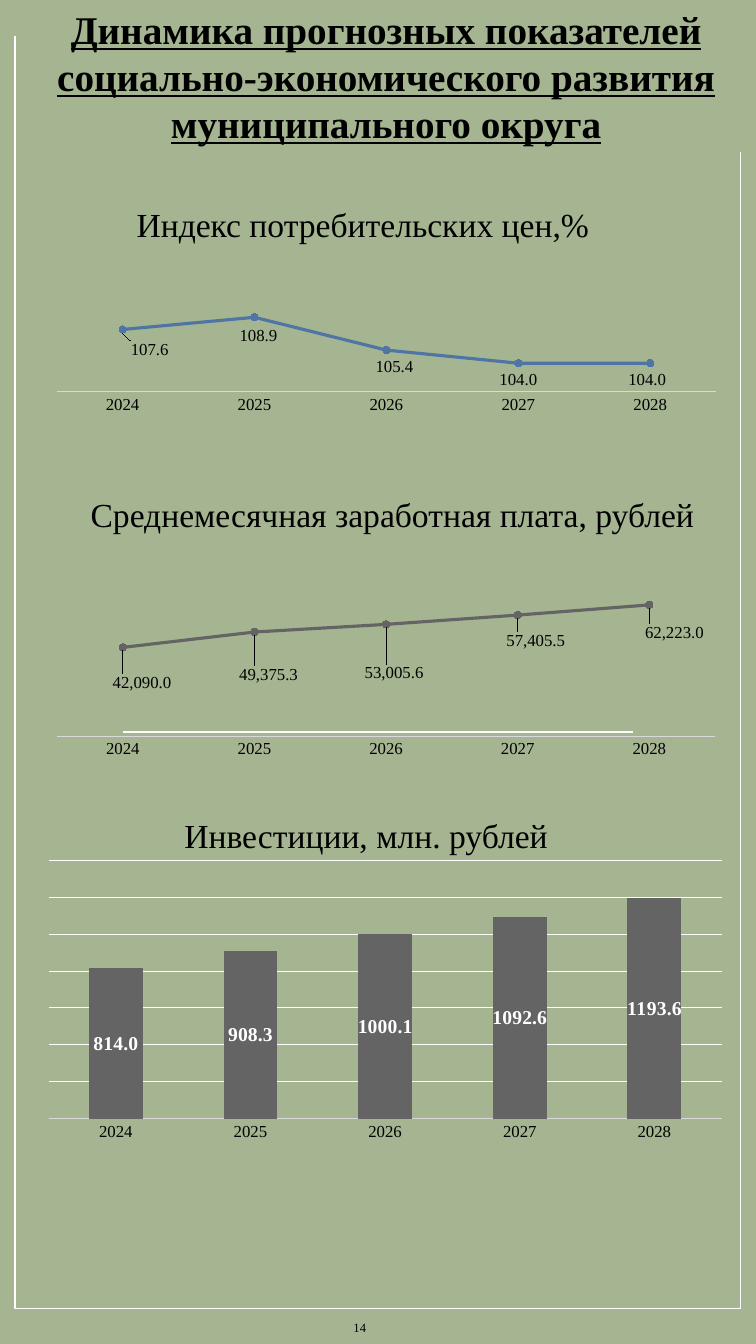
from lxml.etree import SubElement
from pptx import Presentation
from pptx.chart.data import CategoryChartData
from pptx.dml.color import RGBColor
from pptx.enum.chart import XL_CHART_TYPE, XL_LABEL_POSITION, XL_MARKER_STYLE, XL_TICK_MARK
from pptx.enum.shapes import MSO_CONNECTOR, MSO_SHAPE
from pptx.enum.text import MSO_ANCHOR, PP_ALIGN
from pptx.oxml import parse_xml
from pptx.oxml.ns import nsdecls, qn
from pptx.util import Inches, Pt

COLORS = {"bg": "A5B592", "white": "FFFFFF", "text": "000000",
          "axis": "D9D9D9", "blue": "4E75A3", "gray": "646464"}
YEARS = ["2024", "2025", "2026", "2027", "2028"]
FONT = "Times New Roman"


def rgb(name):
    """Return the palette colour called name."""
    return RGBColor.from_string(COLORS[name])


def layout_xml(**values):
    """Return a manual chart layout holding the given values."""
    tags = "".join(f'<c:{k} val="{v}"/>' for k, v in values.items())
    return parse_xml(f'<c:layout {nsdecls("c")}><c:manualLayout>{tags}</c:manualLayout></c:layout>')


class Deck:
    """Holds the style and the current slide."""

    def __init__(self, width, height):
        """Open a presentation with one title-only slide."""
        self.prs = Presentation()
        self.prs.slide_width, self.prs.slide_height = Inches(width), Inches(height)
        self.s = self.prs.slides.add_slide(self.prs.slide_layouts[5])
        self.fill(self.s.background, "bg")

    def fill(self, target, color):
        """Give target a solid fill."""
        target.fill.solid()
        target.fill.fore_color.rgb = rgb(color)

    def stroke(self, line, color, width):
        """Give a line its colour and width."""
        line.color.rgb = rgb(color)
        line.width = Pt(width)

    def style(self, font, size, color="text", **extra):
        """Set font attributes."""
        for name, value in {"name": FONT, "size": Pt(size), **extra}.items():
            setattr(font, name, value)
        font.color.rgb = rgb(color)

    def set_text(self, sp, text, size, align, anchor=MSO_ANCHOR.TOP, **extra):
        """Put one paragraph into a shape."""
        tf = sp.text_frame
        tf.word_wrap, tf.vertical_anchor = True, anchor
        p = tf.paragraphs[0]
        p.alignment = align
        r = p.add_run()
        r.text = text
        self.style(r.font, size, **extra)

    def frame(self, *box):
        """Draw the page frame."""
        sp = self.s.shapes.add_shape(MSO_SHAPE.RECTANGLE, *map(Inches, box))
        sp.shadow.inherit = False
        self.fill(sp, "bg")
        self.stroke(sp.line, "white", 1)

    def rule(self, x1, x2, y):
        """Draw a horizontal line."""
        line = self.s.shapes.add_connector(MSO_CONNECTOR.STRAIGHT, *map(Inches, (x1, y, x2, y)))
        self.stroke(line.line, "white", 0.79)
        SubElement(line._element.spPr, qn("a:effectLst"))

    def title(self, text, *box):
        """Place the slide title in front of the frame."""
        sp = self.s.shapes.title
        sp.left, sp.top, sp.width, sp.height = map(Inches, box)
        self.fill(sp, "bg")
        self.set_text(sp, text, 28, PP_ALIGN.CENTER, bold=True, underline=True)
        self.s.shapes._spTree.append(sp._element)

    def text(self, text, box, size=24, align=PP_ALIGN.LEFT, anchor=MSO_ANCHOR.TOP):
        """Add a text box."""
        self.set_text(self.s.shapes.add_textbox(*map(Inches, box)), text, size, align, anchor)

    def chart(self, kind, box, plot, values, scale, fmt="0.0"):
        """Add a chart with one series by year."""
        data = CategoryChartData(number_format=fmt)
        data.categories = YEARS
        data.add_series("Series 1", values)
        chart = self.s.shapes.add_chart(kind, *map(Inches, box), data).chart
        chart.has_title = chart.has_legend = False
        self.style(chart.font, 10)
        area = chart._chartSpace.chart.plotArea
        for old in area.findall(qn("c:layout")):
            area.remove(old)
        x, y, w, h = plot
        area.insert(0, layout_xml(layoutTarget="inner", xMode="edge", yMode="edge",
                                  x=x, y=y, w=w, h=h))
        cat, val = chart.category_axis, chart.value_axis
        cat.major_tick_mark = XL_TICK_MARK.NONE
        self.style(cat.tick_labels.font, 12)
        self.stroke(cat.format.line, "axis", 0.75)
        val.minimum_scale, val.maximum_scale, val.major_unit = scale
        val.has_major_gridlines = val.visible = False
        val.tick_labels.number_format = fmt
        val.tick_labels.number_format_is_linked = False
        chart.plots[0].vary_by_categories = False
        return chart

    def labels(self, owner, fmt, size, color="text", **extra):
        """Show the values of a series."""
        labels = owner.data_labels
        labels.show_value = True
        labels.number_format, labels.number_format_is_linked = fmt, False
        self.style(labels.font, size, color, **extra)

    def line_chart(self, box, plot, values, scale, color, offsets, fmt="0.0"):
        """Add a line chart whose labels are shifted by offsets in inches."""
        chart = self.chart(XL_CHART_TYPE.LINE_MARKERS, box, plot, values, scale, fmt)
        series = chart.plots[0].series[0]
        series.smooth = False
        self.stroke(series.format.line, color, 2.25)
        series.marker.style, series.marker.size = XL_MARKER_STYLE.CIRCLE, 5
        self.fill(series.marker.format, color)
        self.stroke(series.marker.format.line, color, 0.75)
        self.labels(series, fmt, 12)
        for i in range(len(offsets)):
            label = series.points[i].data_label
            self.style(label.font, 12)
            label.position = XL_LABEL_POSITION.BELOW
        for mark, (dx, dy) in zip(series._element.iter(qn("c:dLbl")), offsets):
            mark.insert(1, layout_xml(x=round(dx / box[2], 4), y=round(dy / box[3], 4)))

    def column_chart(self, box, plot, values, scale, color):
        """Add a column chart with gridlines."""
        chart = self.chart(XL_CHART_TYPE.COLUMN_STACKED, box, plot, values, scale)
        bars = chart.plots[0]
        bars.gap_width, bars.overlap = 150, 100
        self.fill(bars.series[0].format, color)
        self.labels(bars.series[0], "0.0", 14, "white", bold=True)
        chart.value_axis.has_major_gridlines = True
        self.stroke(chart.value_axis.major_gridlines.format.line, "white", 0.75)


def main():
    """Build the slide."""
    deck = Deck(7.5, 13.33)
    deck.frame(0.15, 0.36, 7.2, 12.62)
    deck.rule(1.22, 6.28, 7.26)
    deck.title("Динамика прогнозных показателей социально-экономического развития "
               "муниципального округа", 0.16, 0, 7.34, 1.51)
    deck.text("Индекс потребительских цен,%", (-0.07, 1.97, 7.34, 0.5), align=PP_ALIGN.CENTER)
    deck.line_chart((0.4, 2.78, 6.74, 1.58), (0.024, 0.168, 0.971, 0.53),
                    [107.6, 108.9, 105.4, 104, 104], (101, 110, 1), "blue",
                    [(0.27, 0.04), (0.04, 0.02), (0.08, 0), (0, 0), (-0.03, 0)])
    deck.line_chart((0.56, 5.35, 6.54, 2.28), (0.001, 0.214, 0.999, 0.642),
                    [42090, 49375.3, 53005.6, 57405.5, 62223], (0, 70000, 10000), "gray",
                    [(0.19, 0.19), (0.14, 0.26), (0.08, 0.32), (0.18, 0.09), (0.25, 0.11)],
                    "#,##0.0")
    deck.text("Среднемесячная заработная плата, рублей", (0.8, 4.85, 7.19, 0.5))
    deck.text("14", (3.29, 13, 0.44, 0.34), 9, PP_ALIGN.RIGHT, MSO_ANCHOR.MIDDLE)
    deck.text("Инвестиции, млн. рублей", (1.73, 8.03, 4.22, 0.5))
    deck.column_chart((0.4, 8.05, 6.85, 3.43), (0.012, 0.141, 0.975, 0.747),
                      [814, 908.3, 1000.1, 1092.6, 1193.6], (0, 1400, 200), "gray")
    deck.prs.save("out.pptx")


if __name__ == "__main__":
    main()
